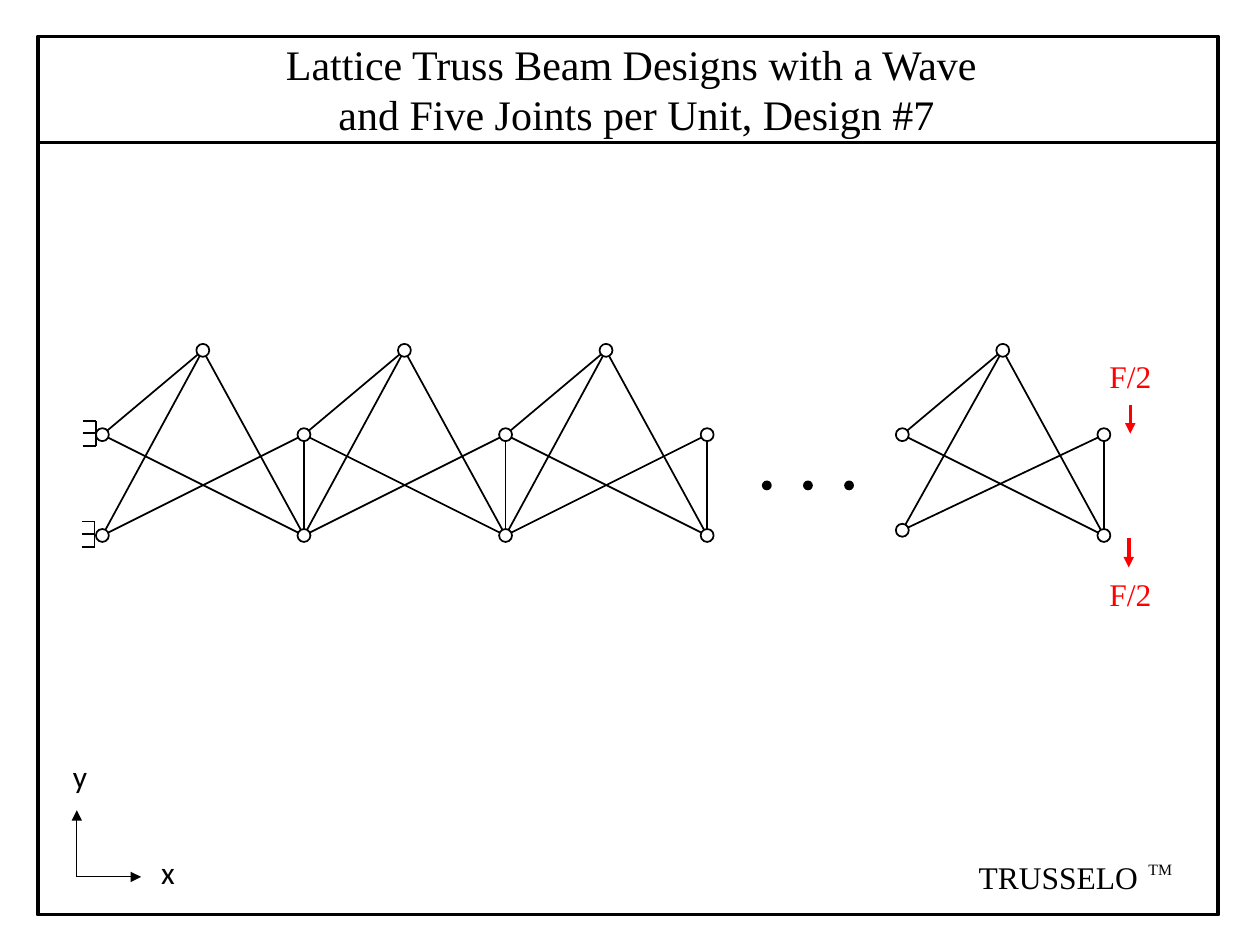
from lxml import etree
from pptx import Presentation
from pptx.dml.color import RGBColor
from pptx.enum.shapes import MSO_CONNECTOR, MSO_SHAPE
from pptx.enum.text import MSO_ANCHOR, MSO_AUTO_SIZE, PP_ALIGN
from pptx.oxml.ns import qn
from pptx.util import Pt

STRAIGHT = MSO_CONNECTOR.STRAIGHT
RECTANGLE, OVAL = MSO_SHAPE.RECTANGLE, MSO_SHAPE.OVAL
MIDDLE, TOP = MSO_ANCHOR.MIDDLE, MSO_ANCHOR.TOP
NO_AUTOFIT, LEFT = MSO_AUTO_SIZE.NONE, PP_ALIGN.LEFT
TITLE_ONLY = 5

BLACK, WHITE, RED = "000000", "FFFFFF", "FF0000"
SERIF, SANS = "Times New Roman", "Calibri"

PITCH, APEX_OFFSET = 115.2, 57.4
APEX_Y, UPPER_Y, LOWER_Y = 200.2, 248.4, 306
JOINT_SIZE, DOT_SIZE = 7.4, 4.6


def color(hex_string):
    return RGBColor.from_string(hex_string)


def add_line(slide, start, end, line_color=BLACK, width=1, arrow=False):
    line = slide.shapes.add_connector(STRAIGHT, *map(Pt, (*start, *end)))
    line.line.color.rgb = color(line_color)
    line.line.width = Pt(width)
    if arrow:
        outline = line.line._get_or_add_ln()
        etree.SubElement(outline, qn("a:tailEnd"), type="triangle")
    etree.SubElement(line._element.spPr, qn("a:effectLst"))


def add_circle(slide, center, size, fill):
    left, top = (value - size / 2 for value in center)
    circle = slide.shapes.add_shape(OVAL, Pt(left), Pt(top), Pt(size), Pt(size))
    circle.shadow.inherit = False
    circle.fill.solid()
    circle.fill.fore_color.rgb = color(fill)
    circle.line.color.rgb = color(BLACK)
    circle.line.width = Pt(1)


def add_frame(slide):
    frame = slide.shapes.add_shape(RECTANGLE, Pt(21.6), Pt(20.9), Pt(674.6), Pt(501.8))
    frame.shadow.inherit = False
    frame.fill.background()
    frame.line.color.rgb = color(BLACK)
    frame.line.width = Pt(2)
    add_line(slide, (21.6, 81.4), (696.2, 81.4), width=2)


def add_text(para, text, size, font, text_color):
    span = para.add_run()
    span.text = text
    span.font.size = Pt(size)
    span.font.name = font
    span.font.color.rgb = color(text_color)


def add_label(slide, text, left, top, width, size=18, font=SERIF, text_color=BLACK):
    box = slide.shapes.add_textbox(Pt(left), Pt(top), Pt(width), Pt(28.8))
    box.text_frame.word_wrap = True
    box.text_frame.vertical_anchor = TOP
    add_text(box.text_frame.paragraphs[0], text, size, font, text_color)


def format_title(slide, lines):
    title = slide.shapes.title
    title.left, title.top, title.width, title.height = map(Pt, (156.2, 18, 423.4, 65.5))
    frame = title.text_frame
    frame.auto_size = NO_AUTOFIT
    frame.vertical_anchor = MIDDLE
    for index, (text, margin) in enumerate(lines):
        para = frame.add_paragraph() if index else frame.paragraphs[0]
        para.alignment = LEFT
        properties = para._p.get_or_add_pPr()
        properties.set("marL", str(Pt(margin)))
        properties.set("indent", "0")
        add_text(para, text, 24, SERIF, BLACK)


def add_truss(slide, left, units, first_lower_y=LOWER_Y):
    columns = [left + PITCH * index for index in range(units + 1)]
    uppers = [(x, UPPER_Y) for x in columns]
    lowers = [(left, first_lower_y)] + [(x, LOWER_Y) for x in columns[1:]]
    apexes = [(x + APEX_OFFSET, APEX_Y) for x in columns[:-1]]
    for index, apex in enumerate(apexes):
        upper, next_upper = uppers[index:index + 2]
        lower, next_lower = lowers[index:index + 2]
        members = [(upper, apex), (lower, apex), (apex, next_lower),
                   (upper, next_lower), (lower, next_upper), (next_upper, next_lower)]
        for start, end in members:
            add_line(slide, start, end)
    for joint in uppers + lowers + apexes:
        add_circle(slide, joint, JOINT_SIZE, WHITE)


def add_support(slide, wall_x, center_y):
    half = 7.2
    add_line(slide, (wall_x, center_y - half), (wall_x, center_y + half))
    for offset in (-half, 0, half):
        add_line(slide, (wall_x - 7.4, center_y + offset), (wall_x, center_y + offset))


def add_load(slide, x, top, label_top):
    add_line(slide, (x, top), (x, top + 16.6), RED, 2, arrow=True)
    add_label(slide, "F/2", 626.8, label_top, 43, text_color=RED)


def add_axes(slide):
    origin = (43.9, 501.1)
    add_line(slide, origin, (80.6, 501.1), width=0.5, arrow=True)
    add_line(slide, origin, (43.9, 463), width=0.5, arrow=True)
    add_label(slide, "x", 85, 483.8, 22.3, font=SANS)
    add_label(slide, "y", 34.6, 429.1, 22.3, font=SANS)


def main():
    deck = Presentation()
    deck.slide_width, deck.slide_height = Pt(720), Pt(540)
    slide = deck.slides.add_slide(deck.slide_layouts[TITLE_ONLY])
    format_title(slide, [("Lattice Truss Beam Designs with a Wave", 0),
                         ("and Five Joints per Unit, Design #7", 30)])
    add_frame(slide)
    add_truss(slide, 58.5, 3)
    add_truss(slide, 515.6, 1, first_lower_y=303)
    add_support(slide, 54.8, 247.6)
    add_support(slide, 54, 305.2)
    for index in range(3):
        add_circle(slide, (438.2 + 23.5 * index, 277.4), DOT_SIZE, BLACK)
    add_load(slide, 645.9, 231.2, 200.2)
    add_load(slide, 645, 307.6, 324.8)
    add_axes(slide)
    add_label(slide, "TRUSSELO", 552.2, 486.7, 109.4)
    add_label(slide, "TM", 649.2, 487.8, 36.7, size=9)
    deck.save("out.pptx")


if __name__ == "__main__":
    main()
